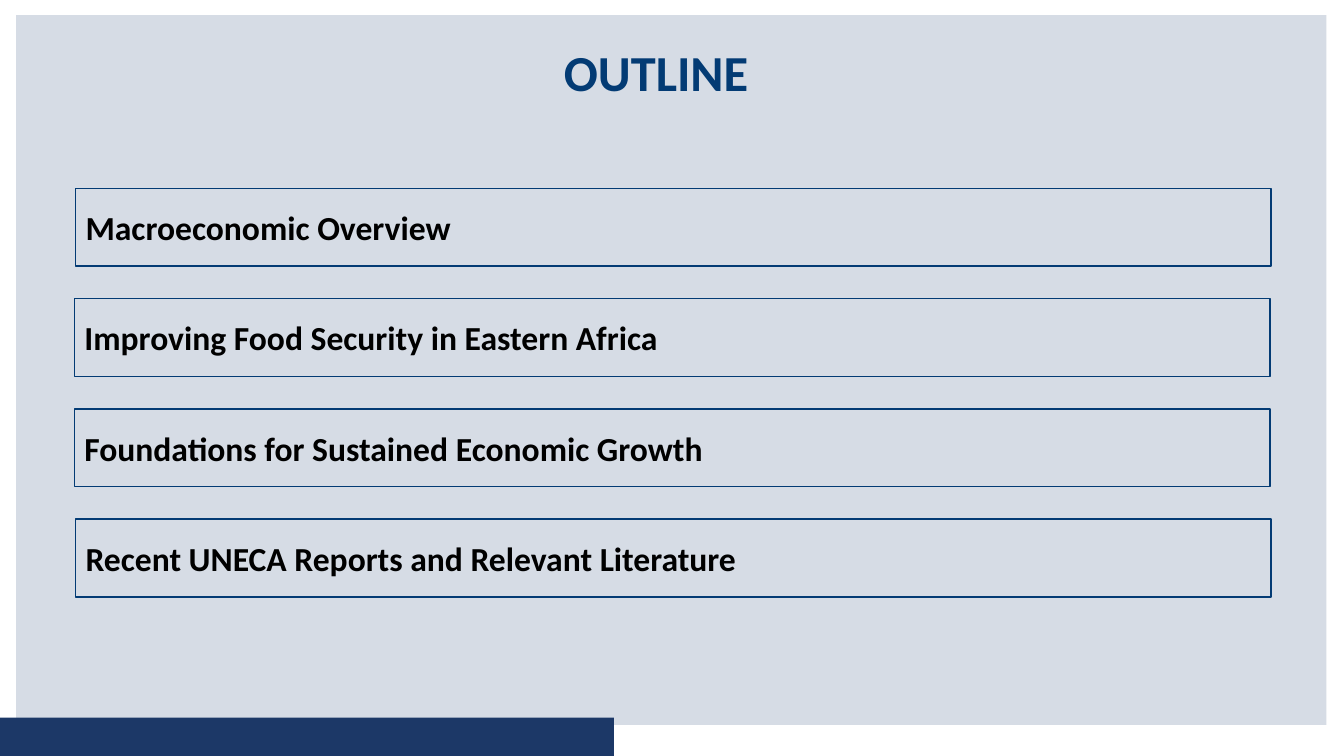
from pptx import Presentation
from pptx.dml.color import RGBColor
from pptx.enum.shapes import MSO_SHAPE
from pptx.enum.text import MSO_ANCHOR, PP_ALIGN
from pptx.util import Pt

PANEL = RGBColor(0xD6, 0xDC, 0xE5)
BAND = RGBColor(0x1C, 0x38, 0x67)
NAVY = RGBColor(0x03, 0x3B, 0x74)
BLACK = RGBColor(0, 0, 0)

TOPICS = [
    ("Macroeconomic Overview", 54),
    ("Improving Food Security in Eastern Africa", 53.2),
    ("Foundations for Sustained Economic Growth", 53.2),
    ("Recent UNECA Reports and Relevant Literature", 54),
]
FIRST_TOP = 134.6
PITCH = 78.75


def add_rectangle(slide, left, top, width, height, fill=None, line=None):
    shape = slide.shapes.add_shape(
        MSO_SHAPE.RECTANGLE, Pt(left), Pt(top), Pt(width), Pt(height))
    shape.shadow.inherit = False
    if fill is None:
        shape.fill.background()
    else:
        shape.fill.solid()
        shape.fill.fore_color.rgb = fill
    if line is None:
        shape.line.fill.background()
    else:
        shape.line.color.rgb = line
        shape.line.width = Pt(1)
    return shape


def write_text(shape, text, size, color, alignment):
    frame = shape.text_frame
    frame.word_wrap = True
    frame.vertical_anchor = MSO_ANCHOR.MIDDLE
    frame.text = text
    paragraph = frame.paragraphs[0]
    paragraph.alignment = alignment
    font = paragraph.runs[0].font
    font.name = "Calibri"
    font.size = Pt(size)
    font.bold = True
    font.color.rgb = color


def add_title(slide, text):
    title = slide.shapes.add_textbox(Pt(22.3), Pt(2.9), Pt(892.8), Pt(102.2))
    write_text(title, text, 36, NAVY, PP_ALIGN.CENTER)
    title.text_frame.paragraphs[0].line_spacing = 0.9


def add_topic(slide, text, left, top):
    box = add_rectangle(slide, left, top, 854, 55.5, line=NAVY)
    write_text(box, text, 24, BLACK, PP_ALIGN.LEFT)


def main():
    presentation = Presentation()
    presentation.slide_width = Pt(960)
    presentation.slide_height = Pt(540)
    slide = presentation.slides.add_slide(presentation.slide_layouts[6])
    add_rectangle(slide, 11.5, 10.8, 936, 507, fill=PANEL)
    add_rectangle(slide, 0, 512.6, 438.5, 27.4, fill=BAND)
    add_title(slide, "OUTLINE")
    for index, (text, left) in enumerate(TOPICS):
        add_topic(slide, text, left, FIRST_TOP + index * PITCH)
    presentation.save("out.pptx")


if __name__ == "__main__":
    main()
